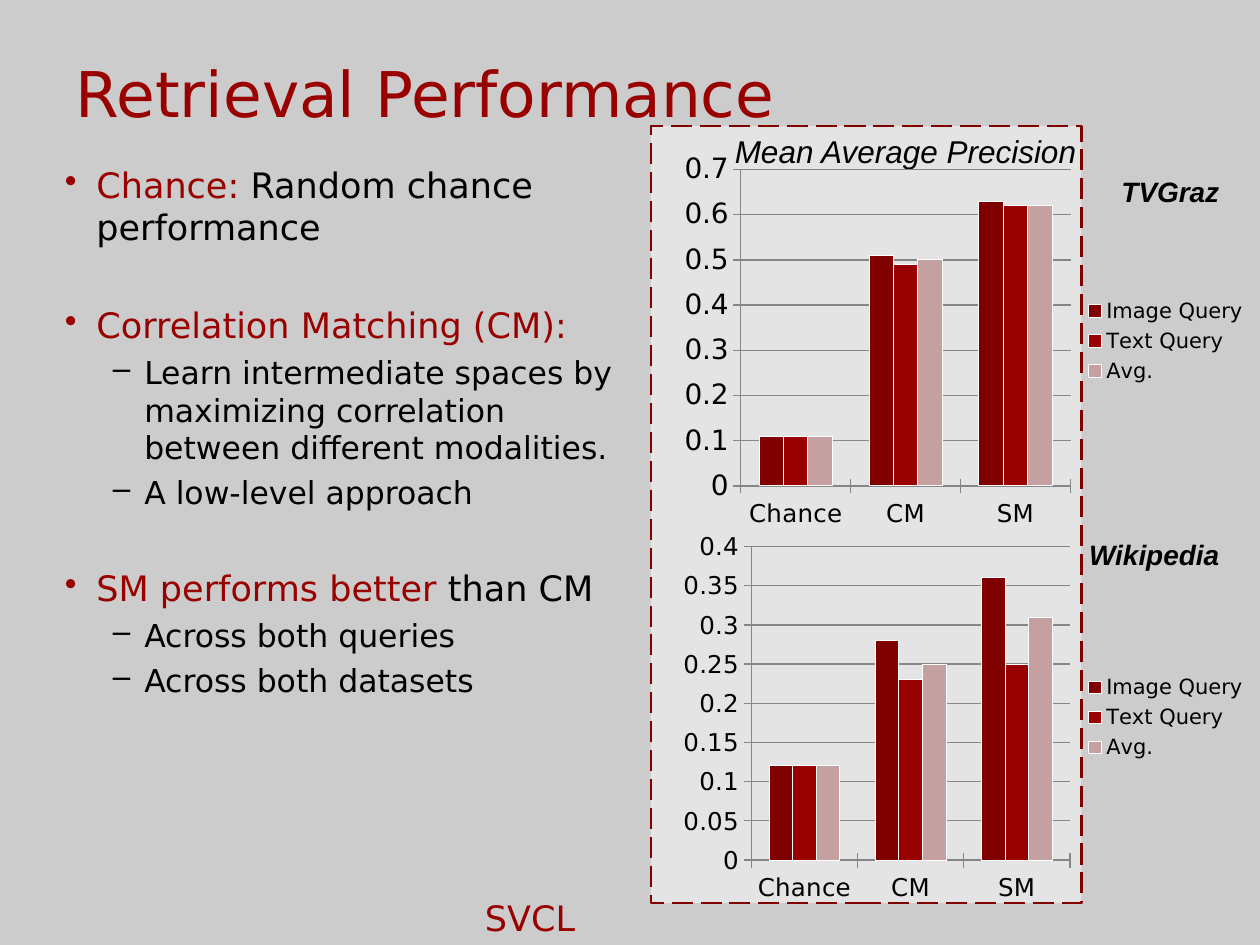
from dataclasses import dataclass
from lxml.etree import SubElement
from pptx import Presentation
from pptx.chart.data import CategoryChartData
from pptx.dml.color import RGBColor
from pptx.enum.chart import XL_CHART_TYPE, XL_LEGEND_POSITION, XL_TICK_MARK
from pptx.enum.dml import MSO_LINE
from pptx.enum.shapes import MSO_SHAPE
from pptx.enum.text import MSO_ANCHOR, MSO_AUTO_SIZE, PP_ALIGN
from pptx.oxml import parse_xml
from pptx.oxml.ns import nsdecls, qn
from pptx.util import Inches, Pt


@dataclass(frozen=True)
class Theme:
    background: str = "CCCCCC"
    panel: str = "E4E4E4"
    accent: str = "990000"
    dark: str = "800000"
    pale: str = "C4A0A0"
    text: str = "000000"
    white: str = "FFFFFF"
    grid: str = "868686"
    main_font: str = "DejaVu Sans"
    label_font: str = "Arial"
    title_size: int = 36
    heading_size: int = 20
    detail_size: int = 18
    label_size: int = 16
    axis_size: int = 14
    legend_size: int = 12


THEME = Theme()
COLUMNS, ROWS = 120, 90
TITLE = "Retrieval Performance"
POINTS = [
    ("Chance: ", "Random chance performance", []),
    ("Correlation Matching (CM):", "", [
        "Learn intermediate spaces by maximizing correlation between different modalities.",
        "A low-level approach",
    ]),
    ("SM performs better ", "than CM", ["Across both queries", "Across both datasets"]),
]
CATEGORIES = ["Chance", "CM", "SM"]
SERIES_COLORS = {"Image Query": THEME.dark, "Text Query": THEME.accent, "Avg.": THEME.pale}
CHARTS = [
    {"name": "TVGraz", "label": (85.3, 16, 32, 4.4), "area": (64, 14, 56, 37),
     "plot": (0.117, 0.058, 0.561, 0.815), "top": 0.7, "step": 0.1, "size": THEME.label_size,
     "values": [(0.11, 0.51, 0.63), (0.11, 0.49, 0.62), (0.11, 0.5, 0.62)]},
    {"name": "Wikipedia", "label": (85.3, 50.6, 32, 4.4), "area": (64, 50, 56, 36.7),
     "plot": (0.135, 0.056, 0.542, 0.814), "top": 0.4, "step": 0.05, "size": THEME.axis_size,
     "values": [(0.12, 0.28, 0.36), (0.12, 0.23, 0.25), (0.12, 0.25, 0.31)]},
]

deck = Presentation()
deck.slide_width, deck.slide_height = Inches(10), Inches(7.5)
page = deck.slides.add_slide(deck.slide_layouts[5])
page.background.fill.solid()
page.background.fill.fore_color.rgb = RGBColor.from_string(THEME.background)


def place(left, top, width, height):
    column, row = deck.slide_width / COLUMNS, deck.slide_height / ROWS
    return [round(n) for n in (left * column, top * row, width * column, height * row)]


def style(font, size, color=THEME.text, name=THEME.main_font, bold=False, italic=False):
    font.size, font.name, font.bold, font.italic = Pt(size), name, bold, italic
    font.color.rgb = RGBColor.from_string(color)


def add_label(text, area, size, align=PP_ALIGN.LEFT, wrap=True, **look):
    box = page.shapes.add_textbox(*place(*area))
    box.text_frame.word_wrap = wrap
    para = box.text_frame.paragraphs[0]
    para.text, para.alignment = text, align
    style(para.runs[0].font, size, **look)


def add_bullet(para, mark, color, indent, space):
    para.space_before = Pt(space)
    props = para._p.get_or_add_pPr()
    props.set("marL", str(Inches(indent)))
    props.set("indent", str(Inches(-0.25)))
    tint = SubElement(props, qn("a:buClr"))
    SubElement(tint, qn("a:srgbClr")).set("val", color)
    SubElement(props, qn("a:buChar")).set("char", mark)


def add_points(area):
    frame = page.shapes.add_textbox(*place(*area)).text_frame
    frame.word_wrap = True
    for number, (lead, rest, details) in enumerate(POINTS):
        para = frame.add_paragraph() if number else frame.paragraphs[0]
        add_bullet(para, "•", THEME.accent, 0.25, 32 if number else 0)
        for text, color in ((lead, THEME.accent), (rest, THEME.text)):
            if text:
                span = para.add_run()
                span.text = text
                style(span.font, THEME.heading_size, color)
        for detail in details:
            para = frame.add_paragraph()
            para.text, para.level = detail, 1
            add_bullet(para, "–", THEME.text, 0.63, 4)
            style(para.runs[0].font, THEME.detail_size)


def format_axis(axis, size):
    axis.major_tick_mark = XL_TICK_MARK.CROSS
    axis.minor_tick_mark = XL_TICK_MARK.NONE
    axis.format.line.color.rgb = RGBColor.from_string(THEME.grid)
    style(axis.tick_labels.font, size)


def set_plot_area(chart, shares):
    sizes = "".join(f'<c:{key} val="{share}"/>' for key, share in zip("xywh", shares))
    layout = parse_xml(
        f'<c:layout {nsdecls("c")}><c:manualLayout><c:layoutTarget val="inner"/>'
        f'<c:xMode val="edge"/><c:yMode val="edge"/>{sizes}</c:manualLayout></c:layout>')
    plot_area = chart._chartSpace.chart.plotArea
    for old in plot_area.findall(qn("c:layout")):
        plot_area.remove(old)
    plot_area.insert(0, layout)


def add_precision_chart(item):
    data = CategoryChartData()
    data.categories = CATEGORIES
    for name, values in zip(SERIES_COLORS, item["values"]):
        data.add_series(name, values)
    chart = page.shapes.add_chart(
        XL_CHART_TYPE.COLUMN_CLUSTERED, *place(*item["area"]), data).chart
    chart.has_title = False
    style(chart.font, THEME.detail_size)
    format_axis(chart.category_axis, THEME.axis_size)
    axis = chart.value_axis
    format_axis(axis, item["size"])
    axis.minimum_scale, axis.maximum_scale, axis.major_unit = 0, item["top"], item["step"]
    axis.major_gridlines.format.line.color.rgb = RGBColor.from_string(THEME.grid)
    plot = chart.plots[0]
    plot.gap_width, plot.overlap, plot.vary_by_categories = 150, 0, False
    for series, color in zip(plot.series, SERIES_COLORS.values()):
        series.format.fill.solid()
        series.format.fill.fore_color.rgb = RGBColor.from_string(color)
        series.format.line.color.rgb = RGBColor.from_string(THEME.white)
    chart.has_legend = True
    chart.legend.position = XL_LEGEND_POSITION.RIGHT
    chart.legend.include_in_layout = False
    style(chart.legend.font, THEME.legend_size)
    set_plot_area(chart, item["plot"])


panel = page.shapes.add_shape(MSO_SHAPE.RECTANGLE, *place(62, 12, 41, 74))
panel.shadow.inherit = False
panel.fill.solid()
panel.fill.fore_color.rgb = RGBColor.from_string(THEME.panel)
panel.line.color.rgb = RGBColor.from_string(THEME.dark)
panel.line.width, panel.line.dash_style = Pt(1.5), MSO_LINE.LONG_DASH

title = page.shapes.title
title.left, title.top, title.width, title.height = place(6, 3.6, 108, 10.4)
title.text_frame.text = TITLE
title.text_frame.auto_size = MSO_AUTO_SIZE.NONE
title.text_frame.vertical_anchor = MSO_ANCHOR.MIDDLE
title.text_frame.paragraphs[0].alignment = PP_ALIGN.LEFT
style(title.text_frame.paragraphs[0].runs[0].font, THEME.title_size, THEME.accent)

add_points((5, 15, 56, 69))
add_label("SVCL", (45, 84.8, 11.2, 5.2), THEME.heading_size, wrap=False, color=THEME.accent)
add_label("Mean Average Precision", (68.8, 12, 35.2, 4.8), THEME.detail_size,
          wrap=False, name=THEME.label_font, italic=True)
for item in CHARTS:
    add_label(item["name"], item["label"], THEME.label_size, PP_ALIGN.RIGHT,
              name=THEME.label_font, bold=True, italic=True)
    add_precision_chart(item)

deck.save("out.pptx")
